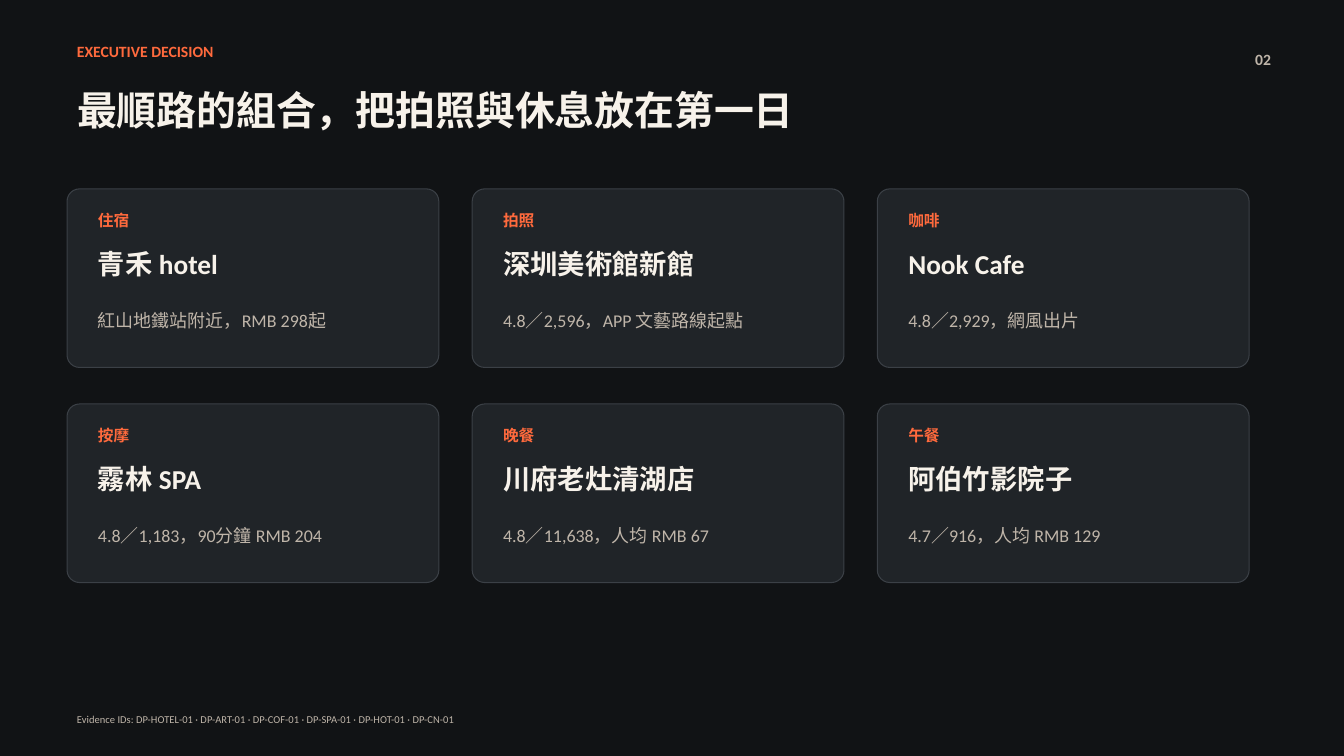
from pptx import Presentation
from pptx.dml.color import RGBColor
from pptx.enum import shapes, text
from pptx.util import Cm, Pt

KICKER = "EXECUTIVE DECISION"
TITLE = "最順路的組合，把拍照與休息放在第一日"
PAGE_NUMBER = "02"
EVIDENCE = (
    "Evidence IDs: DP-HOTEL-01 · DP-ART-01 · DP-COF-01 · "
    "DP-SPA-01 · DP-HOT-01 · DP-CN-01"
)
CARDS = [
    ("住宿", "青禾 hotel", "紅山地鐵站附近，RMB 298起"),
    ("拍照", "深圳美術館新館", "4.8／2,596，APP 文藝路線起點"),
    ("咖啡", "Nook Cafe", "4.8／2,929，網風出片"),
    ("按摩", "霧林 SPA", "4.8／1,183，90分鐘 RMB 204"),
    ("晚餐", "川府老灶清湖店", "4.8／11,638，人均 RMB 67"),
    ("午餐", "阿伯竹影院子", "4.7／916，人均 RMB 129"),
]

BACKGROUND = RGBColor(0x11, 0x13, 0x15)
CARD_FILL = RGBColor(0x20, 0x24, 0x28)
CARD_LINE = RGBColor(0x3B, 0x40, 0x46)
ORANGE = RGBColor(0xFF, 0x6A, 0x3D)
CREAM = RGBColor(0xF7, 0xF2, 0xEA)
TAUPE = RGBColor(0xBF, 0xB5, 0xA9)

FONT = "Calibri"
MARGIN = 1.69
COLUMNS = 3
CARD_TOP, CARD_WIDTH, CARD_HEIGHT = 4.76, 9.37, 4.5
COLUMN_PITCH, ROW_PITCH = 10.21, 5.42
CARD_PADDING = 0.53
CARD_TEXT_WIDTH = CARD_WIDTH - 2 * CARD_PADDING
CARD_LINES = [
    (0.48, 2.92, 0.64, dict(size=11.2, color=ORANGE, bold=True)),
    (1.32, CARD_TEXT_WIDTH, 1.12, dict(size=19.5, color=CREAM, bold=True)),
    (2.77, CARD_TEXT_WIDTH, 1.07, dict(size=12.8, color=TAUPE)),
]


def write(slide, content, left, top, width, height, *, size, color,
          bold=False, align=text.PP_ALIGN.LEFT, shape=None):
    box = [Cm(value) for value in (left, top, width, height)]
    if shape is None:
        shape = slide.shapes.add_textbox(*box)
    else:
        shape.left, shape.top, shape.width, shape.height = box
    frame = shape.text_frame
    frame.word_wrap = True
    frame.auto_size = text.MSO_AUTO_SIZE.NONE
    frame.vertical_anchor = text.MSO_ANCHOR.MIDDLE
    frame.text = content
    paragraph = frame.paragraphs[0]
    paragraph.alignment = align
    font = paragraph.runs[0].font
    font.name, font.size, font.bold = FONT, Pt(size), bold
    font.color.rgb = color


def add_card(slide, left, top, contents):
    card = slide.shapes.add_shape(
        shapes.MSO_SHAPE.ROUNDED_RECTANGLE,
        Cm(left), Cm(top), Cm(CARD_WIDTH), Cm(CARD_HEIGHT))
    card.adjustments[0] = 0.07
    card.shadow.inherit = False
    card.fill.solid()
    card.fill.fore_color.rgb = CARD_FILL
    card.line.color.rgb = CARD_LINE
    card.line.width = Pt(0.75)
    for content, (offset, width, height, style) in zip(contents, CARD_LINES):
        write(slide, content, left + CARD_PADDING, top + offset,
              width, height, **style)


def main():
    presentation = Presentation()
    presentation.slide_width, presentation.slide_height = Cm(33.87), Cm(19.05)
    slide = presentation.slides.add_slide(presentation.slide_layouts[5])
    slide.background.fill.solid()
    slide.background.fill.fore_color.rgb = BACKGROUND

    write(slide, KICKER, MARGIN, 0.9, 17.2, 0.79,
          size=11.2, color=ORANGE, bold=True)
    write(slide, TITLE, MARGIN, 1.8, 28.58, 1.9,
          size=28.5, color=CREAM, bold=True, shape=slide.shapes.title)
    write(slide, PAGE_NUMBER, 30.96, 1.12, 1.32, 0.74,
          size=11.2, color=TAUPE, bold=True, align=text.PP_ALIGN.RIGHT)

    for index, contents in enumerate(CARDS):
        row, column = divmod(index, COLUMNS)
        add_card(slide, MARGIN + column * COLUMN_PITCH,
                 CARD_TOP + row * ROW_PITCH, contents)

    write(slide, EVIDENCE, MARGIN, 17.88, 30.18, 0.48, size=7.5, color=TAUPE)
    presentation.save("out.pptx")


if __name__ == "__main__":
    main()
